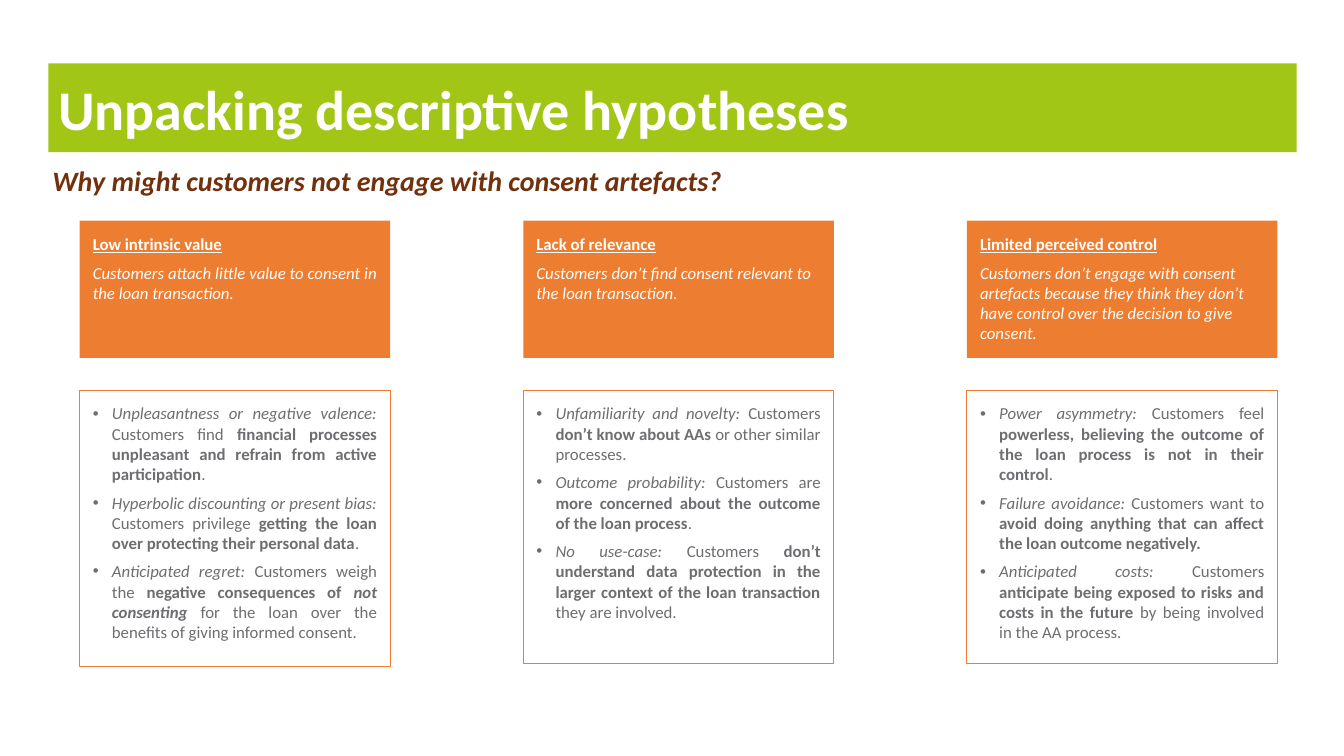
import pptx
import pptx.util
import pptx.dml.color
import pptx.enum.shapes
import pptx.enum.text
import pptx.oxml.ns
from lxml import etree

Inches = pptx.util.Inches
Align = pptx.enum.text.PP_ALIGN
Anchor = pptx.enum.text.MSO_ANCHOR

ORANGE, GREEN, BROWN, GREY, WHITE = "ED7D31", "A2C616", "72310C", "6D6E71", "FFFFFF"
LEFT, STEP, WIDTH = 0.79, 4.4, 3.08

# Each card: heading, summary, summary alignment, height of its box, points.
# Each point is a list of (style letters, text).
CARDS = [
    ("Low intrinsic value",
     "Customers attach little value to consent in the loan transaction.",
     Align.JUSTIFY, 2.74, [
         [("i", "Unpleasantness or negative valence: "), ("", "Customers find "),
          ("b", "financial processes unpleasant and refrain from active participation"),
          ("", ".")],
         [("i", "Hyperbolic discounting or present bias: "), ("", "Customers privilege "),
          ("b", "getting the loan over protecting their personal data"), ("", ".")],
         [("i", "Anticipated regret: "), ("", "Customers weigh the "),
          ("b", "negative consequences of "), ("bi", "not consenting "),
          ("", "for the loan over the benefits of giving informed consent.")],
     ]),
    ("Lack of relevance",
     "Customers don’t find consent relevant to the loan transaction.",
     Align.LEFT, 2.71, [
         [("i", "Unfamiliarity and novelty: "), ("", "Customers"),
          ("b", " don’t know about AAs "), ("", "or other similar processes.")],
         [("i", "Outcome probability: "), ("", "Customers are"),
          ("b", " more concerned about the outcome of the loan process"), ("", ".")],
         [("i", "No use-case: "), ("", "Customers "),
          ("b", "don’t understand data protection in the larger context of the loan "
                "transaction"),
          ("", " they are involved.")],
     ]),
    ("Limited perceived control",
     "Customers don’t engage with consent artefacts because they think they don’t "
     "have control over the decision to give consent.",
     Align.LEFT, 2.71, [
         [("i", "Power asymmetry: "), ("", "Customers feel "),
          ("b", "powerless, believing the outcome of the loan process is not in their "
                "control"),
          ("", ".")],
         [("i", "Failure avoidance: "), ("", "Customers want to "),
          ("b", "avoid doing anything that can affect the loan outcome negatively.")],
         [("i", "Anticipated costs: "), ("", "Customers "),
          ("b", "anticipate being exposed to risks and costs in the future"),
          ("", " by being involved in the AA process.")],
     ]),
]


def color(code):
    return pptx.dml.color.RGBColor.from_string(code)


def apply(thing, values):
    for name, value in values.items():
        setattr(thing, name, value)


def set_frame(shape, inset, anchor):
    """Set wrap, insets and anchor, and return the text frame."""
    frame = shape.text_frame
    sides = ("margin_left", "margin_top", "margin_right", "margin_bottom")
    apply(frame, {"word_wrap": True, "vertical_anchor": anchor,
                  **dict.fromkeys(sides, Inches(inset))})
    return frame


def add_box(slide, area, inset, fill=None, line=None, anchor=Anchor.TOP):
    """Add a rectangle and return its text frame."""
    kind = pptx.enum.shapes.MSO_SHAPE.RECTANGLE
    box = slide.shapes.add_shape(kind, *map(Inches, area))
    box.shadow.inherit = False
    if fill:
        box.fill.solid()
        box.fill.fore_color.rgb = color(fill)
    else:
        box.fill.background()
    if line:
        box.line.color.rgb = color(line)
        box.line.width = pptx.util.Pt(0.75)
    else:
        box.line.fill.background()
    return set_frame(box, inset, anchor)


def add_bullet(para):
    props = para._p.get_or_add_pPr()
    props.set("marL", str(Inches(0.19)))
    props.set("indent", str(Inches(-0.19)))
    tint = etree.SubElement(props, pptx.oxml.ns.qn("a:buClr"))
    etree.SubElement(tint, pptx.oxml.ns.qn("a:srgbClr"), val=GREY)
    etree.SubElement(props, pptx.oxml.ns.qn("a:buFont"), typeface="Arial")
    etree.SubElement(props, pptx.oxml.ns.qn("a:buChar"), char="•")


def add_para(frame, runs, size, tone, align=Align.LEFT, after=0, bullet=False):
    """Write a paragraph; the style letters are b, i and u."""
    first = frame.paragraphs[0]
    para = frame.add_paragraph() if first.runs else first
    apply(para, {"alignment": align, "space_after": pptx.util.Pt(after)})
    if bullet:
        add_bullet(para)
    for style, text in runs:
        run = para.add_run()
        run.text = text
        apply(run.font, {"name": "Calibri", "size": pptx.util.Pt(size),
                         "bold": "b" in style, "italic": "i" in style,
                         "underline": "u" in style})
        run.font.color.rgb = color(tone)


def add_card(slide, left, head, brief, align, height, points):
    # Orange summary
    frame = add_box(slide, (left, 2.19, WIDTH, 1.36), 0.13, fill=ORANGE)
    add_para(frame, [("bu", head)], 12, WHITE, after=6)
    add_para(frame, [("i", brief)], 12, WHITE, align)
    # Outlined list of points
    frame = add_box(slide, (left, 3.87, WIDTH, height), 0.13, line=ORANGE)
    for runs in points:
        add_para(frame, runs, 12, GREY, Align.JUSTIFY, 6, bullet=True)


def main():
    deck = pptx.Presentation()
    apply(deck, {"slide_width": Inches(13.33), "slide_height": Inches(7.5)})
    slide = deck.slides.add_slide(deck.slide_layouts[6])

    # Three cards
    for index, card in enumerate(CARDS):
        add_card(slide, LEFT + index * STEP, *card)

    # Question
    label = slide.shapes.add_textbox(*map(Inches, (0.42, 1.52, 12.29, 0.54)))
    frame = set_frame(label, 0.1, Anchor.TOP)
    add_para(frame, [("bi", "Why might customers not engage with consent artefacts?")],
             20, BROWN, Align.JUSTIFY)

    # Title band
    frame = add_box(slide, (0.48, 0.63, 12.38, 0.88), 0.1, fill=GREEN,
                    anchor=Anchor.MIDDLE)
    add_para(frame, [("b", "Unpacking descriptive hypotheses")], 40, WHITE)

    deck.save("out.pptx")


if __name__ == "__main__":
    main()
